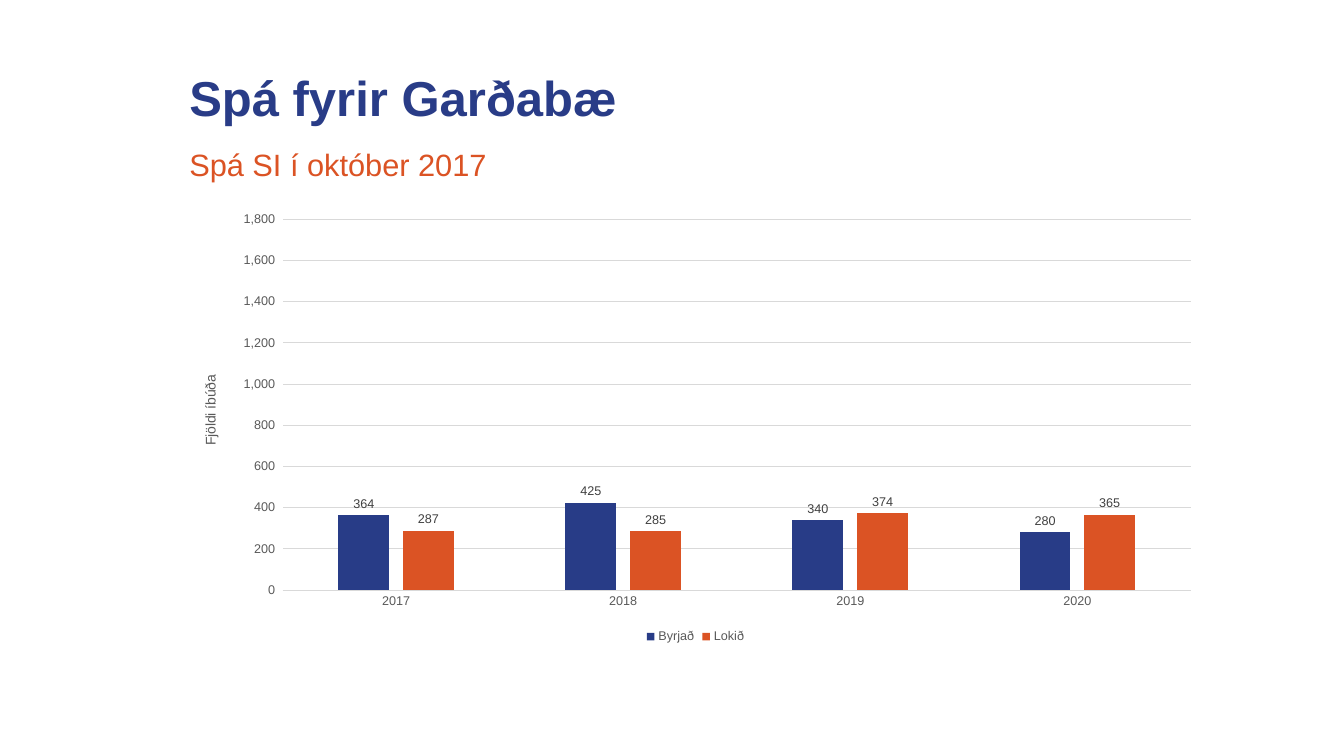
from lxml import etree
from pptx import Presentation
from pptx.chart.data import CategoryChartData
from pptx.dml.color import RGBColor
from pptx.enum.chart import XL_CHART_TYPE as ChartType, XL_LABEL_POSITION as LabelPos
from pptx.enum.chart import XL_LEGEND_POSITION as LegendPos, XL_TICK_MARK as Tick
from pptx.enum.text import MSO_ANCHOR as Anchor
from pptx.oxml import parse_xml
from pptx.oxml.ns import nsdecls, qn
from pptx.util import Pt

FONT = "Arial"
NAVY = RGBColor(0x29, 0x3C, 0x87)
BAR_NAVY = RGBColor(0x28, 0x3C, 0x87)
ORANGE = RGBColor(0xDB, 0x53, 0x24)
GRAY = RGBColor(0x59, 0x59, 0x59)
DARK = RGBColor(0x40, 0x40, 0x40)
LIGHT = RGBColor(0xD9, 0xD9, 0xD9)
BLACK = RGBColor(0, 0, 0)

LEFT, WIDTH = 128.16, 737.28
YEARS = ["2017", "2018", "2019", "2020"]
SERIES = [
    ("Byrjað", [364, 425, 340, 280], BAR_NAVY),
    ("Lokið", [287, 285, 374, 365], ORANGE),
]


def set_font(font, size, color, bold=False):
    """Apply the slide's typeface with a size, colour and weight."""
    font.name = FONT
    font.size = Pt(size)
    font.color.rgb = color
    font.bold = bold


def add_heading(s, box, text, size, color, bold=False, anchor=Anchor.TOP):
    """Write one heading line in the given box."""
    tf = s.shapes.add_textbox(*map(Pt, box)).text_frame
    tf.word_wrap = True
    tf.vertical_anchor = anchor
    p = tf.paragraphs[0]
    p.line_spacing = 0.9
    r = p.add_run()
    r.text = text
    set_font(r.font, size, color, bold)


def set_plot_layout(chart, x, y, w, h):
    """Fix the inner plot area as fractions of the chart."""
    plot_area = chart._chartSpace.chart.plotArea
    for old in plot_area.findall(qn("c:layout")):
        plot_area.remove(old)
    layout = parse_xml(f"<c:layout {nsdecls('c')}/>")
    manual = etree.SubElement(layout, qn("c:manualLayout"))
    settings = [("layoutTarget", "inner"), ("xMode", "edge"), ("yMode", "edge"),
                ("x", x), ("y", y), ("w", w), ("h", h)]
    for name, value in settings:
        etree.SubElement(manual, qn(f"c:{name}")).set("val", str(value))
    plot_area.insert(0, layout)


def style_axes(chart):
    """Format both axes, the gridlines and the value title."""
    cat, val = chart.category_axis, chart.value_axis
    for axis in (cat, val):
        axis.major_tick_mark = axis.minor_tick_mark = Tick.NONE
        set_font(axis.tick_labels.font, 9, GRAY)
    val.minimum_scale, val.maximum_scale, val.major_unit = 0, 1800, 200
    val.tick_labels.number_format = "#,##0_ ;\\-#,##0\\ "
    val.tick_labels.number_format_is_linked = False
    val.format.line.fill.background()
    for line in (cat.format.line, val.major_gridlines.format.line):
        line.color.rgb = LIGHT
        line.width = Pt(0.75)
    r = val.axis_title.text_frame.paragraphs[0].add_run()
    r.text = "Fjöldi íbúða"
    set_font(r.font, 10, GRAY)


def add_forecast_chart(s, box):
    """Draw the column chart of started and finished homes."""
    data = CategoryChartData()
    data.categories = YEARS
    for name, values, _ in SERIES:
        data.add_series(name, values)
    chart = s.shapes.add_chart(ChartType.COLUMN_CLUSTERED, *map(Pt, box), data).chart
    set_font(chart.font, 10, BLACK)
    chart.has_title = False
    chart.has_legend = True
    chart.legend.position = LegendPos.BOTTOM
    chart.legend.include_in_layout = False
    set_font(chart.legend.font, 9, GRAY)
    style_axes(chart)
    plot = chart.plots[0]
    plot.vary_by_categories = False
    plot.gap_width, plot.overlap = 219, -27
    for series, (_, _, color) in zip(plot.series, SERIES):
        series.format.fill.solid()
        series.format.fill.fore_color.rgb = color
        labels = series.data_labels
        labels.show_value = True
        labels.position = LabelPos.OUTSIDE_END
        set_font(labels.font, 9, DARK)
    set_plot_layout(chart, 0.1, 0.035, 0.88, 0.835)


def main():
    """Build and save the forecast slide."""
    prs = Presentation()
    prs.slide_width, prs.slide_height = Pt(960), Pt(540)
    s = prs.slides.add_slide(prs.slide_layouts[6])
    add_heading(s, (LEFT, 43.2, WIDTH, 51.12), "Spá fyrir Garðabæ", 35, NAVY,
                bold=True, anchor=Anchor.BOTTOM)
    add_forecast_chart(s, (LEFT, 145.44, WIDTH, 317.52))
    add_heading(s, (LEFT, 103.68, WIDTH, 28.08), "Spá SI í október 2017", 22, ORANGE)
    prs.save("out.pptx")


if __name__ == "__main__":
    main()
